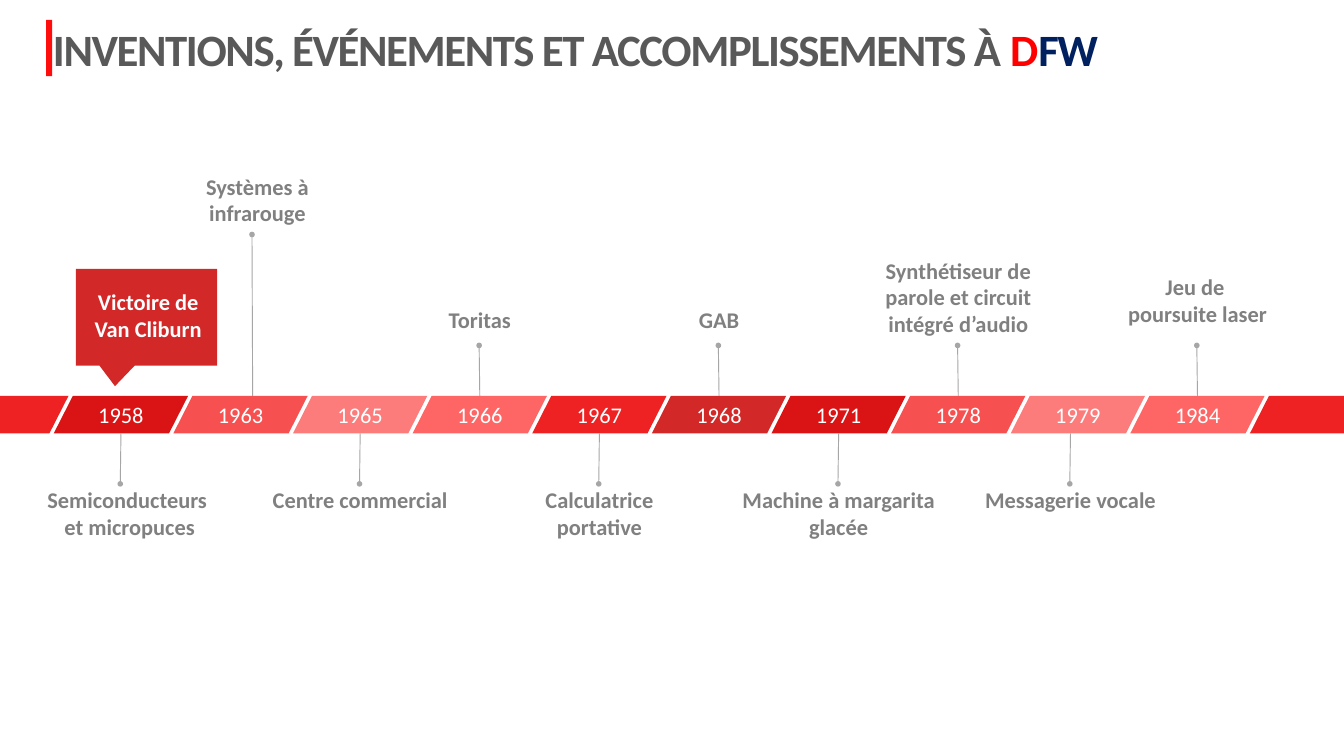
from dataclasses import dataclass
from itertools import cycle

from lxml.etree import SubElement
from pptx import Presentation
from pptx.dml.color import RGBColor
from pptx.enum.shapes import MSO_CONNECTOR as Connector, MSO_SHAPE as Preset
from pptx.enum.text import MSO_ANCHOR as Anchor, MSO_AUTO_SIZE as AutoSize, PP_ALIGN as Align
from pptx.oxml.ns import qn
from pptx.util import Inches, Pt

COLUMNS, ROWS = 20, 11.25
CELL = Inches(1)


@dataclass(frozen=True)
class Theme:
    font: str = "Calibri"
    title_size: int = 48
    body_size: int = 24
    title: str = "595959"
    label: str = "808080"
    line: str = "A6A6A6"
    white: str = "FFFFFF"
    accent: str = "FF0C0C"
    red: str = "FF0000"
    navy: str = "002060"
    edge: str = "EE2222"
    callout: str = "D22828"
    band: tuple = ("DA1414", "F65050", "FC7C7C", "FE6666", "EE2222", "D22828")


@dataclass(frozen=True)
class Box:
    left: float
    top: float
    width: float
    height: float

    def emu(self):
        return [round(CELL * n) for n in (self.left, self.top, self.width, self.height)]


@dataclass(frozen=True)
class Event:
    year: str
    label: str
    rise: float = 0
    lines: int = 1
    width: float = 3.06
    stem: float = 0.75
    stem_shift: float = 0
    label_shift: float = 0


THEME = Theme()
EVENTS = [
    Event("1958", "Semiconducteurs \vet micropuces", lines=2, width=2.84, label_shift=0.13),
    Event("1963", "Systèmes à infrarouge", rise=3.37, lines=2, width=2.75, stem=2.4,
          stem_shift=0.18, label_shift=0.25),
    Event("1965", "Centre commercial"),
    Event("1966", "Toritas", rise=1.38, width=2.93),
    Event("1967", "Calculatrice portative", lines=2),
    Event("1968", "GAB", rise=1.38, width=2.93),
    Event("1971", "Machine à margarita glacée", lines=2),
    Event("1978", "Synthétiseur de parole et circuit intégré d’audio", rise=2.12, lines=3,
          width=2.93),
    Event("1979", "Messagerie vocale", stem_shift=-0.11, label_shift=-0.11),
    Event("1984", "Jeu de \vpoursuite laser", rise=1.88, lines=2, width=2.93),
]


def rgb(value):
    return RGBColor.from_string(value)


def style(font, size, color, bold):
    font.name = THEME.font
    font.size = Pt(size)
    font.bold = bold
    font.color.rgb = rgb(color)


def add_block(slide, preset, box, color):
    shape = slide.shapes.add_shape(preset, *box.emu())
    shape.shadow.inherit = False
    shape.fill.solid()
    shape.fill.fore_color.rgb = rgb(color)
    shape.line.fill.background()
    return shape


def add_text(slide, box):
    frame = slide.shapes.add_textbox(*box.emu()).text_frame
    frame.word_wrap = True
    frame.auto_size = AutoSize.SHAPE_TO_FIT_TEXT
    return frame.paragraphs[0]


def add_label(slide, box, text, color):
    paragraph = add_text(slide, box)
    paragraph.text = text
    paragraph.alignment = Align.CENTER
    style(paragraph.font, THEME.body_size, color, True)


def add_title(slide, box):
    bar = Box(box.left - 0.38, box.top + 0.39, 0.84, 0.09)
    add_block(slide, Preset.RECTANGLE, bar, THEME.accent).rotation = 90
    paragraph = add_text(slide, box)
    parts = [("INVENTIONS, ÉVÉNEMENTS ET ACCOMPLISSEMENTS À ", THEME.title),
             ("D", THEME.red), ("FW", THEME.navy)]
    for text, color in parts:
        run = paragraph.add_run()
        run.text = text
        style(run.font, THEME.title_size, color, True)
        run.font._element.set("spc", "-150")


def add_stem(slide, x, start, end):
    points = [round(CELL * n) for n in (x, start, x - 0.01, end)]
    stem = slide.shapes.add_connector(Connector.STRAIGHT, *points)
    stem.line.color.rgb = rgb(THEME.line)
    stem.line.width = Pt(1)
    SubElement(stem.line._get_or_add_ln(), qn("a:tailEnd"), type="oval")
    SubElement(stem._element.spPr, qn("a:effectLst"))


def add_segment(slide, box, color, year=""):
    segment = add_block(slide, Preset.PARALLELOGRAM, box, color)
    segment.adjustments[0] = 0.509
    if year:
        frame = segment.text_frame
        frame.vertical_anchor = Anchor.MIDDLE
        paragraph = frame.paragraphs[0]
        paragraph.text = year
        paragraph.alignment = Align.CENTER
        style(paragraph.font, THEME.body_size, THEME.white, False)


def add_event(slide, box, event, color):
    add_segment(slide, box, color, event.year)
    center = box.left + box.width / 2
    bottom = box.top + box.height
    if event.rise:
        start, end, top = box.top, box.top - event.stem, box.top - event.rise
    else:
        start, end, top = bottom, bottom + event.stem, bottom + 0.73
    add_stem(slide, center + event.stem_shift, start, end)
    left = center + event.label_shift - event.width / 2
    label_box = Box(left, top, event.width, 0.1 + 0.4 * event.lines)
    add_label(slide, label_box, event.label, THEME.label)


def add_timeline(slide, box):
    pitch, width, first = 1.78, 2, box.left + 0.8

    def segment_box(index):
        return Box(first + index * pitch, box.top, width, box.height)

    for index in (-1, len(EVENTS)):
        add_segment(slide, segment_box(index), THEME.edge)
    for index, (event, color) in enumerate(zip(EVENTS, cycle(THEME.band))):
        add_event(slide, segment_box(index), event, color)


def add_callout(slide, box, text):
    callout = add_block(slide, Preset.RECTANGULAR_CALLOUT, box, THEME.callout)
    callout.adjustments[0] = -0.223
    callout.adjustments[1] = 0.713
    add_label(slide, Box(box.left + 0.05, box.top + 0.24, 2.05, 0.91), text, THEME.white)


def main():
    presentation = Presentation()
    presentation.slide_width = CELL * COLUMNS
    presentation.slide_height = round(CELL * ROWS)
    slide = presentation.slides.add_slide(presentation.slide_layouts[6])
    add_title(slide, Box(0.69, 0.28, 18.68, 0.91))
    add_timeline(slide, Box(0, 5.89, COLUMNS, 0.56))
    add_callout(slide, Box(1.13, 4, 2.1, 1.44), "Victoire de Van Cliburn")
    presentation.save("out.pptx")


if __name__ == "__main__":
    main()
